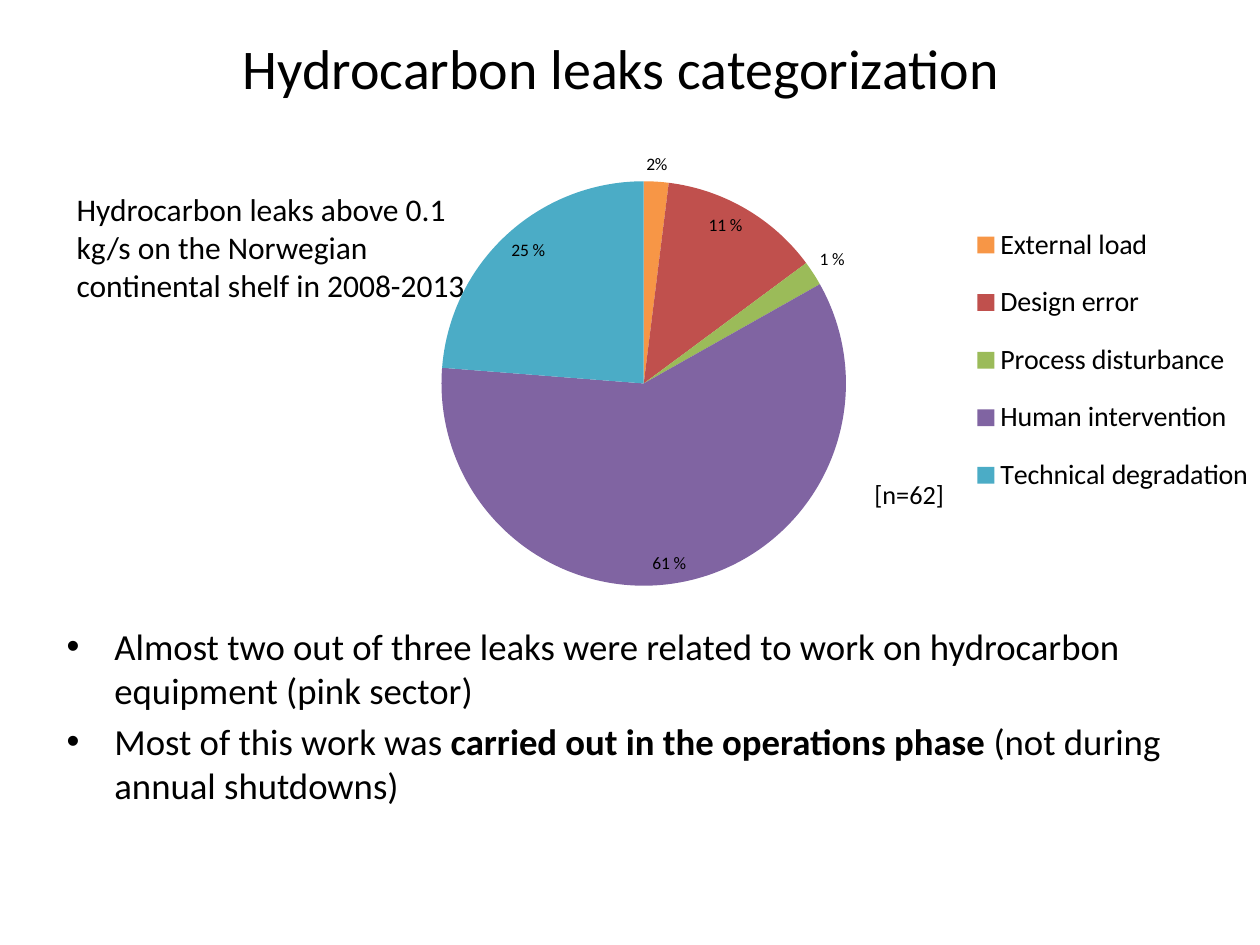
"""Build the hydrocarbon leaks slide with its pie chart and findings."""
from lxml import etree
from pptx import Presentation
from pptx.chart.data import CategoryChartData
from pptx.dml.color import RGBColor
from pptx.enum.chart import XL_CHART_TYPE, XL_LABEL_POSITION, XL_LEGEND_POSITION
from pptx.enum.text import MSO_ANCHOR, PP_ALIGN
from pptx.oxml import parse_xml
from pptx.oxml.ns import nsdecls, qn
from pptx.util import Inches, Pt

PIE = XL_CHART_TYPE.PIE
LEGEND_RIGHT = XL_LEGEND_POSITION.RIGHT
INSIDE, OUTSIDE = XL_LABEL_POSITION.INSIDE_END, XL_LABEL_POSITION.OUTSIDE_END
LEFT, CENTER, RIGHT = PP_ALIGN.LEFT, PP_ALIGN.CENTER, PP_ALIGN.RIGHT
MIDDLE = MSO_ANCHOR.MIDDLE

THEME = {
    "font": "Calibri", "text": RGBColor(0, 0, 0),
    "title": 32, "body": 21, "caption": 18, "legend": 16, "note": 15, "label": 10,
}
SECTORS = [
    ("External load", 2, "F79646", None, OUTSIDE),
    ("Design error", 13, "C0504D", "11 %", INSIDE),
    ("Process disturbance", 2, "9BBB59", "1 %", OUTSIDE),
    ("Human intervention", 60, "8064A2", "61 %", INSIDE),
    ("Technical degradation", 24, "4BACC6", "25 %", INSIDE),
]
FINDINGS = [
    [("Almost two out of three leaks were related to work on hydrocarbon "
      "equipment (pink sector)", False)],
    [("Most of this work was ", False),
     ("carried out in the operations phase ", True),
     ("(not during annual shutdowns)", False)],
]


def write(tf, paragraphs, size, align=LEFT, bullet=False):
    tf.word_wrap = True
    for i, runs in enumerate(paragraphs):
        p = tf.paragraphs[0] if i == 0 else tf.add_paragraph()
        p.alignment = align
        for text, bold in runs:
            r = p.add_run()
            r.text = text
            r.font.name, r.font.size, r.font.bold = THEME["font"], Pt(size), bold
            r.font.color.rgb = THEME["text"]
        if bullet:
            p.space_before = Pt(size * 0.2)
            pPr = p._p.get_or_add_pPr()
            pPr.set("marL", str(Inches(0.38)))
            pPr.set("indent", str(Inches(-0.38)))
            etree.SubElement(pPr, qn("a:buFont"), typeface="Arial")
            etree.SubElement(pPr, qn("a:buChar"), char="•")


def manual_layout(x, y, w, h, target=""):
    parts = [("xMode", "edge"), ("yMode", "edge"), ("x", x), ("y", y), ("w", w), ("h", h)]
    if target:
        parts.insert(0, ("layoutTarget", target))
    body = "".join(f'<c:{tag} val="{val}"/>' for tag, val in parts)
    return parse_xml(f'<c:layout {nsdecls("c")}><c:manualLayout>{body}</c:manualLayout></c:layout>')


prs = Presentation()
prs.slide_width, prs.slide_height = Inches(10), Inches(7.5)
s = prs.slides.add_slide(prs.slide_layouts[5])

title = s.shapes.title
title.left, title.top, title.width, title.height = (Inches(v) for v in (0.43, 0.13, 9, 0.8))
title.text_frame.vertical_anchor = MIDDLE
write(title.text_frame, [[("Hydrocarbon leaks categorization", False)]], THEME["title"], CENTER)

TEXTS = [
    ((0.43, 4.9, 9.57, 2.26), FINDINGS, THEME["body"], LEFT, True),
    ((6.61, 3.75, 0.98, 0.36), [[("[n=62]", False)]], THEME["note"], RIGHT, False),
    ((0.51, 1.46, 3.53, 1.02),
     [[("Hydrocarbon leaks above 0.1 kg/s on the Norwegian continental shelf in 2008-2013", False)]],
     THEME["caption"], LEFT, False),
]
for box, paragraphs, size, align, bullet in TEXTS:
    sp = s.shapes.add_textbox(*(Inches(v) for v in box))
    write(sp.text_frame, paragraphs, size, align=align, bullet=bullet)

data = CategoryChartData()
data.categories = [sector[0] for sector in SECTORS]
data.add_series("Series 1", [sector[1] for sector in SECTORS])
chart = s.shapes.add_chart(PIE, Inches(2.7), Inches(1.07), Inches(7.3), Inches(3.69), data).chart
chart.has_title = False
chart.font.name, chart.font.size = THEME["font"], Pt(THEME["label"])
chart.font.color.rgb = THEME["text"]

plot = chart.plots[0]
plot.vary_by_categories = True
series = plot.series[0]
labels = series.data_labels
labels.show_percentage, labels.show_value = True, False
labels.number_format, labels.number_format_is_linked = "0%", False
labels.position = OUTSIDE
for point_no, (name, value, color, label, position) in enumerate(SECTORS):
    point = series.points[point_no]
    point.format.fill.solid()
    point.format.fill.fore_color.rgb = RGBColor.from_string(color)
    if label:
        write(point.data_label.text_frame, [[(label, False)]], THEME["label"], CENTER)
        point.data_label.position = position

chart.has_legend = True
legend = chart.legend
legend.position, legend.include_in_layout = LEGEND_RIGHT, False
legend.font.name, legend.font.size = THEME["font"], Pt(THEME["legend"])
legend.font.color.rgb = THEME["text"]

plot_area = chart._chartSpace.chart.plotArea
for old in plot_area.findall(qn("c:layout")):
    plot_area.remove(old)
plot_area.insert(0, manual_layout(0.11, 0.1, 0.44, 0.87, target="inner"))
legend_el = legend._element
for old in legend_el.findall(qn("c:layout")):
    legend_el.remove(old)
legend_el.find(qn("c:legendPos")).addnext(manual_layout(0.68, 0.15, 0.32, 0.67))

prs.save("out.pptx")
